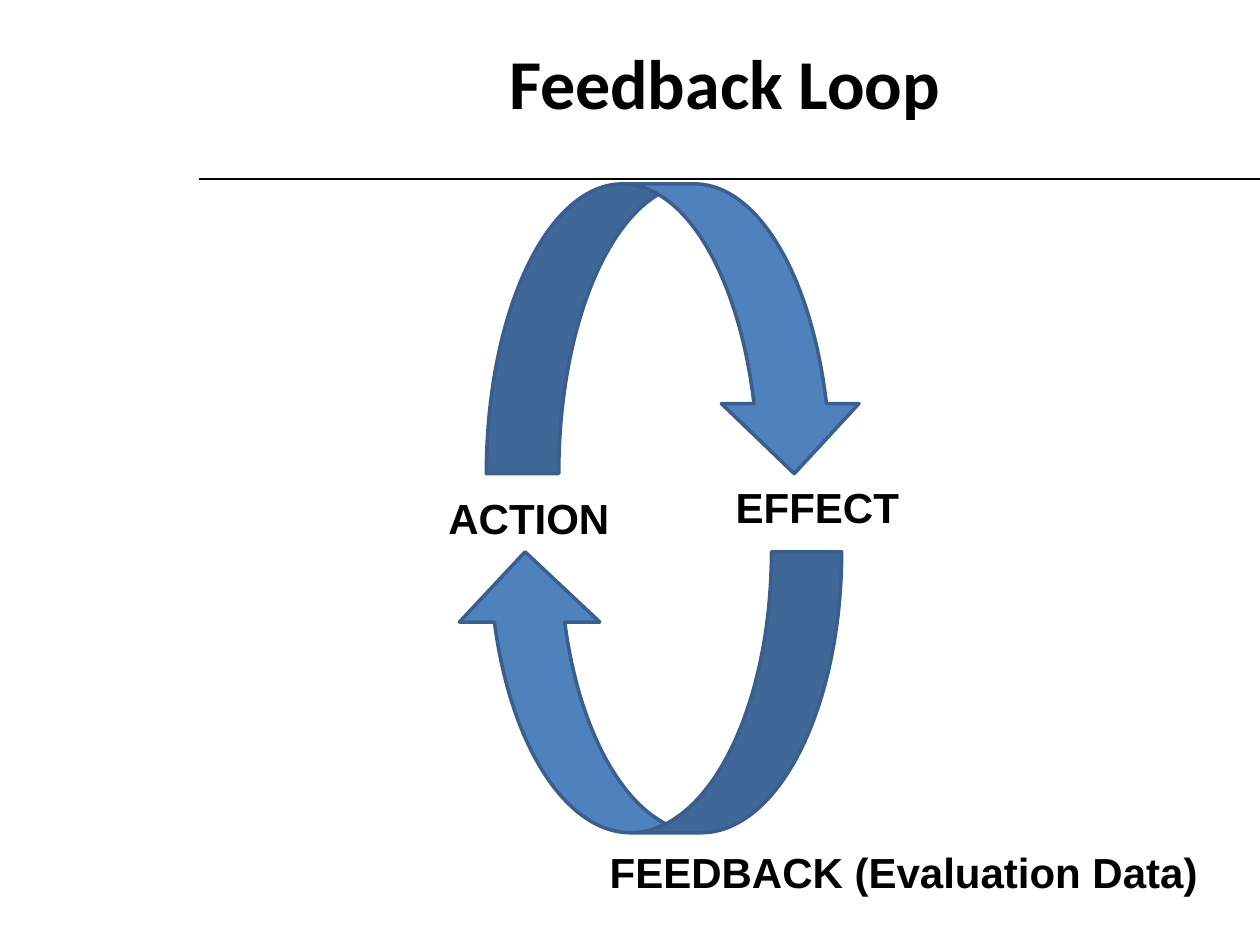
import pptx
import pptx.util
import pptx.dml.color
import pptx.enum.shapes
import pptx.enum.text
import pptx.oxml.ns
import lxml.etree

Inches = pptx.util.Inches
Pt = pptx.util.Pt
Shape = pptx.enum.shapes.MSO_SHAPE
Align = pptx.enum.text.PP_ALIGN
Anchor = pptx.enum.text.MSO_ANCHOR
Fit = pptx.enum.text.MSO_AUTO_SIZE
colors = {"ink": "000000", "arrow": "4F81BD", "edge": "3A5F8C"}


def color(name):
    return pptx.dml.color.RGBColor.from_string(colors[name])


def write(frame, text, face, size):
    run = frame.paragraphs[0].add_run()
    run.text = text
    run.font.name = face
    run.font.size = Pt(size)
    run.font.bold = True
    run.font.color.rgb = color("ink")


deck = pptx.Presentation()
deck.slide_width = Inches(10)
deck.slide_height = Inches(7.5)
slide = deck.slides.add_slide(deck.slide_layouts[5])
shapes = slide.shapes

rule = shapes.add_connector(
    pptx.enum.shapes.MSO_CONNECTOR.STRAIGHT,
    Inches(1.58), Inches(1.42), Inches(10), Inches(1.42))
rule.line.color.rgb = color("ink")
rule.line.width = Pt(0.75)
lxml.etree.SubElement(rule.element.spPr, pptx.oxml.ns.qn("a:effectLst"))

title = shapes.title
title.left, title.top = Inches(1.75), Inches(0)
title.width, title.height = Inches(8), Inches(1.3)
title.text_frame.vertical_anchor = Anchor.MIDDLE
title.text_frame.paragraphs[0].alignment = Align.CENTER
write(title.text_frame, "Feedback Loop", "Calibri", 40)

arrows = [
    (Shape.CURVED_DOWN_ARROW, 3.86, 1.46, 2.99, 2.3, 0, (0.25, 0.475, 0.242)),
    (Shape.CURVED_LEFT_ARROW, 4.03, 3.96, 2.23, 3.07, 90, (0.25, 0.5, 0.25)),
]
for kind, left, top, width, height, turn, bends in arrows:
    arrow = shapes.add_shape(
        kind, Inches(left), Inches(top), Inches(width), Inches(height))
    arrow.rotation = turn
    for index, bend in enumerate(bends):
        arrow.adjustments[index] = bend
    arrow.shadow.inherit = False
    arrow.fill.solid()
    arrow.fill.fore_color.rgb = color("arrow")
    arrow.line.color.rgb = color("edge")
    arrow.line.width = Pt(2)

labels = [
    ("ACTION", 3.46, 3.86, 1.49),
    ("EFFECT", 5.74, 3.77, 1.51),
    ("FEEDBACK (Evaluation Data)", 4.74, 6.67, 4.92),
]
for text, left, top, width in labels:
    label = shapes.add_textbox(
        Inches(left), Inches(top), Inches(width), Inches(0.5))
    label.text_frame.word_wrap = False
    label.text_frame.auto_size = Fit.SHAPE_TO_FIT_TEXT
    write(label.text_frame, text, "Arial", 24)

deck.save("out.pptx")
